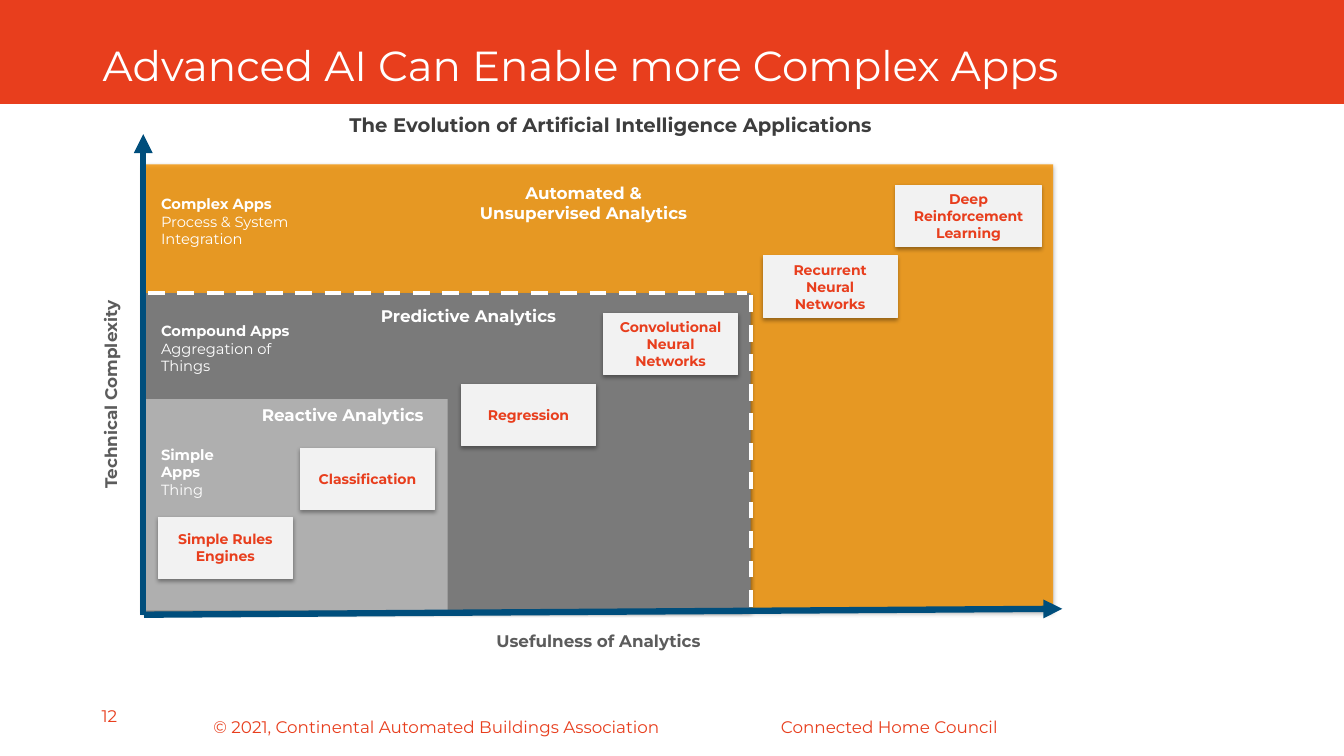
"""Build the slide on how advanced AI enables more complex applications."""
from dataclasses import dataclass

import lxml.etree
import pptx
import pptx.dml.color
import pptx.enum.dml
import pptx.enum.shapes
import pptx.enum.text
import pptx.oxml
import pptx.oxml.ns
import pptx.util
from pptx.util import Cm

ALIGN = pptx.enum.text.PP_ALIGN
ANCHOR = pptx.enum.text.MSO_ANCHOR


@dataclass(frozen=True)
class Theme:
    font: str = "Montserrat"
    accent: str = "E83E1D"
    white: str = "FFFFFF"
    amber: str = "F49200"
    dark_grey: str = "7A7A7A"
    light_grey: str = "AFAFAF"
    card: str = "F2F2F2"
    axis: str = "004E7C"
    axis_label: str = "5C5C5C"
    heading: str = "3D3D3D"
    title_size: float = 30
    heading_size: float = 14
    label_size: float = 12
    app_size: float = 10.5
    card_size: float = 10


theme = Theme()
rgb = pptx.dml.color.RGBColor.from_string
qn = pptx.oxml.ns.qn

deck = pptx.Presentation()
deck.slide_width, deck.slide_height = Cm(33.87), Cm(19.05)
slide = deck.slides.add_slide(deck.slide_layouts[6])
shapes = slide.shapes


def add_panel(left, top, width, height, color, shadow_alpha=0):
    """Add a filled rectangle, with a soft drop shadow if an alpha is given."""
    panel = shapes.add_shape(pptx.enum.shapes.MSO_SHAPE.RECTANGLE,
                             Cm(left), Cm(top), Cm(width), Cm(height))
    panel.shadow.inherit = False
    panel.fill.solid()
    panel.fill.fore_color.rgb = rgb(color)
    panel.line.fill.background()
    if shadow_alpha:
        effects = panel._element.spPr.find(qn("a:effectLst"))
        shadow = lxml.etree.SubElement(
            effects, qn("a:outerShdw"), blurRad="39370", dist="20320",
            dir="5400000", rotWithShape="0")
        black = lxml.etree.SubElement(shadow, qn("a:srgbClr"), val="000000")
        lxml.etree.SubElement(black, qn("a:alpha"), val=str(shadow_alpha * 1000))
    return panel


def write(box, lines, size, color, align=ALIGN.LEFT, anchor=ANCHOR.TOP,
          inset=(0.25, 0.13)):
    """Fill a shape with (text, bold) lines, one paragraph each."""
    frame = box.text_frame
    frame.word_wrap = True
    frame.vertical_anchor = anchor
    frame.margin_left = frame.margin_right = Cm(inset[0])
    frame.margin_top = frame.margin_bottom = Cm(inset[1])
    for index, (text, bold) in enumerate(lines):
        paragraph = frame.add_paragraph() if index else frame.paragraphs[0]
        paragraph.alignment = align
        run = paragraph.add_run()
        run.text = text
        run.font.name = theme.font
        run.font.size = pptx.util.Pt(size)
        run.font.bold = bold
        run.font.color.rgb = rgb(color)


add_panel(0, 0, 33.87, 2.62, theme.accent)
title = shapes.add_textbox(Cm(2.34), Cm(1.02), Cm(25.86), Cm(1.24))
write(title, [("Advanced AI Can Enable more Complex Apps", False)],
      theme.title_size, theme.white)
title.text_frame.paragraphs[0].line_spacing = 0.9

footers = [
    ("© 2021, Continental Automated Buildings Association",
     5.13, 17.81, 11.86, ANCHOR.MIDDLE),
    ("Connected Home Council", 19.43, 17.81, 6.07, ANCHOR.MIDDLE),
    ("12", 2.31, 17.65, 1.73, ANCHOR.TOP),
]
for text, left, top, width, anchor in footers:
    footer = shapes.add_textbox(Cm(left), Cm(top), Cm(width), Cm(1.02))
    write(footer, [(text, False)], theme.label_size, theme.accent, anchor=anchor)

zone_left, zone_bottom = 3.63, 15.39
zones = [
    (22.91, 11.25, theme.amber, 38),
    (15.29, 8, theme.dark_grey, 38),
    (7.65, 5.33, theme.light_grey, 0),
]
for width, height, color, shadow_alpha in zones:
    zone = add_panel(zone_left, zone_bottom - height, width, height, color, shadow_alpha)
    if color == theme.amber:
        amber_fill = zone._element.spPr.find(qn("a:solidFill"))[0]
        lxml.etree.SubElement(amber_fill, qn("a:alpha"), val="80000")

rules = [
    (3.73, 7.39, 18.82, 7.39, theme.white, 3, False),
    (18.92, 15.29, 18.92, 7.39, theme.white, 3, False),
    (3.61, 15.49, 3.61, 3.38, theme.axis, 4.5, True),
    (3.63, 15.49, 26.77, 15.34, theme.axis, 4.5, True),
]
for x1, y1, x2, y2, color, weight, is_axis in rules:
    rule = shapes.add_connector(pptx.enum.shapes.MSO_CONNECTOR.STRAIGHT,
                                Cm(x1), Cm(y1), Cm(x2), Cm(y2))
    rule.line.color.rgb = rgb(color)
    rule.line.width = pptx.util.Pt(weight)
    if is_axis:
        lxml.etree.SubElement(rule.line._get_or_add_ln(), qn("a:tailEnd"),
                              type="triangle")
    else:
        rule.line.dash_style = pptx.enum.dml.MSO_LINE.DASH
    lxml.etree.SubElement(rule._element.spPr, qn("a:effectLst"))

techniques = [
    ("Simple Rules Engines", 3.99, 13.03, 3.38),
    ("Classification", 7.57, 11.3, 3.38),
    ("Regression", 11.63, 9.68, 3.38),
    ("Convolutional Neural Networks", 15.21, 7.9, 3.38),
    ("Recurrent Neural Networks", 19.23, 6.45, 3.38),
    ("Deep Reinforcement Learning", 22.58, 4.67, 3.66),
]
for name, left, top, width in techniques:
    technique = add_panel(left, top, width, 1.55, theme.card, 35)
    technique.line.color.rgb = rgb(theme.card)
    technique.line.width = pptx.util.Pt(0.75)
    write(technique, [(name, True)], theme.card_size, theme.accent,
          ALIGN.CENTER, ANCHOR.MIDDLE, (0.36, 0.18))

app_levels = [
    ("Simple Apps", "Thing", 11.1, 2.44),
    ("Compound Apps", "Aggregation of Things", 7.98, 3.84),
    ("Complex Apps", "Process & System Integration", 4.78, 5),
]
for level, scope, top, width in app_levels:
    app_level = shapes.add_textbox(Cm(3.81), Cm(top), Cm(width), Cm(1.47))
    write(app_level, [(level, True), (scope, False)], theme.app_size, theme.white)

captions = [
    ("Automated & Unsupervised Analytics", 11.46, 4.42, 6.5, theme.white, 0),
    ("Predictive Analytics", 8.56, 7.52, 6.5, theme.white, 0),
    ("Reactive Analytics", 5.82, 10.03, 5.64, theme.white, 0),
    ("Usefulness of Analytics", 3.63, 15.72, 22.91, theme.axis_label, 0),
    ("Technical Complexity", -0.69, 9.4, 7.16, theme.axis_label, 270),
]
for text, left, top, width, color, rotation in captions:
    caption = shapes.add_textbox(Cm(left), Cm(top), Cm(width), Cm(1.08))
    caption.rotation = rotation
    write(caption, [(text, True)], theme.label_size, color, ALIGN.CENTER,
          inset=(0.36, 0.18))

heading = shapes.add_textbox(Cm(3.94), Cm(2.64), Cm(22.91), Cm(1.02))
write(heading, [("The Evolution of Artificial Intelligence Applications", True)],
      theme.heading_size, theme.heading, ALIGN.CENTER, ANCHOR.MIDDLE)

deck.save("out.pptx")
